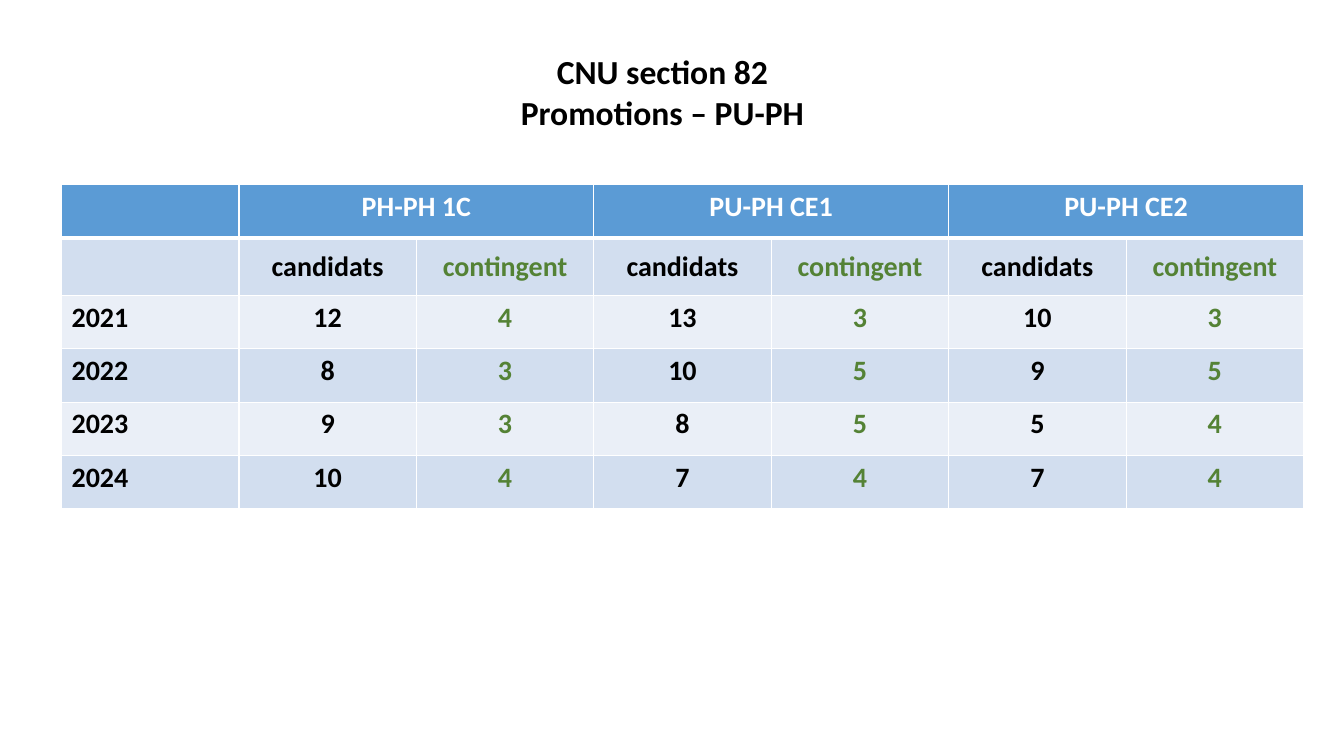
from dataclasses import dataclass

from lxml.etree import SubElement
from pptx import Presentation
from pptx.dml.color import RGBColor
from pptx.enum.text import MSO_ANCHOR, MSO_AUTO_SIZE, PP_ALIGN
from pptx.oxml.ns import qn
from pptx.slide import Slide
from pptx.table import Table, _Cell
from pptx.text.text import TextFrame
from pptx.util import Inches, Pt


@dataclass(frozen=True)
class Theme:
    font: str = "Calibri"
    title_size: int = 24
    table_size: int = 20
    text: str = "000000"
    quota: str = "548235"
    white: str = "FFFFFF"
    header: str = "5B9BD5"
    band_dark: str = "D2DEEF"
    band_light: str = "EAEFF7"
    thin: int = 1
    thick: int = 3


@dataclass(frozen=True)
class CellStyle:
    fill: str
    color: str
    align: PP_ALIGN = PP_ALIGN.CENTER
    anchor: MSO_ANCHOR = MSO_ANCHOR.TOP
    top: int = 1
    bottom: int = 1


@dataclass(frozen=True)
class YearRow:
    year: int
    counts: tuple[int, ...]  # candidats, contingent for each grade


THEME = Theme()
TITLE = ("CNU section 82", "Promotions – PU-PH")
GRADES = ("PH-PH 1C", "PU-PH CE1", "PU-PH CE2")
MEASURES = ("candidats", "contingent")
YEARS = (
    YearRow(2021, (12, 4, 13, 3, 10, 3)),
    YearRow(2022, (8, 3, 10, 5, 9, 5)),
    YearRow(2023, (9, 3, 8, 5, 5, 4)),
    YearRow(2024, (10, 4, 7, 4, 7, 4)),
)
COLUMN_COUNT = 1 + len(GRADES) * len(MEASURES)
COLUMN_WIDTH = 1.76
ROW_HEIGHTS = (0.53, 0.57) + (0.53,) * len(YEARS)


def write_line(frame: TextFrame, index: int, text: str, size: int,
               color: str, align: PP_ALIGN) -> None:
    line = frame.paragraphs[0] if index == 0 else frame.add_paragraph()
    line.alignment = align
    run = line.add_run()
    run.text = text
    font_format = {"name": THEME.font, "size": Pt(size), "bold": True}
    for attribute, value in font_format.items():
        setattr(run.font, attribute, value)
    run.font.color.rgb = RGBColor.from_string(color)


def draw_title(slide: Slide) -> None:
    title = slide.shapes.add_textbox(
        Inches(5.05), Inches(0.46), Inches(3.04), Inches(0.91)).text_frame
    frame_format = {"word_wrap": False,
                    "auto_size": MSO_AUTO_SIZE.SHAPE_TO_FIT_TEXT}
    for attribute, value in frame_format.items():
        setattr(title, attribute, value)
    for index, text in enumerate(TITLE):
        write_line(title, index, text, THEME.title_size, THEME.text,
                   PP_ALIGN.CENTER)


def add_borders(cell: _Cell, top: int, bottom: int) -> None:
    properties = cell._tc.get_or_add_tcPr()
    widths = {"L": THEME.thin, "R": THEME.thin, "T": top, "B": bottom}
    for side, width in widths.items():
        border = SubElement(properties, qn(f"a:ln{side}"), w=str(Pt(width)))
        paint = SubElement(border, qn("a:solidFill"))
        SubElement(paint, qn("a:srgbClr"), val=THEME.white)


def fill_cell(cell: _Cell, text: str, style: CellStyle) -> None:
    # Borders come before the fill in the cell properties
    add_borders(cell, style.top, style.bottom)
    cell.fill.solid()
    cell.fill.fore_color.rgb = RGBColor.from_string(style.fill)
    cell.vertical_anchor = style.anchor
    if text:
        write_line(cell.text_frame, 0, text, THEME.table_size, style.color,
                   style.align)


def measure_color(column: int) -> str:
    is_quota = column > 0 and column % len(MEASURES) == 0
    return THEME.quota if is_quota else THEME.text


def fill_table(table: Table) -> None:
    # Grade headings, each across its two measures
    heading = CellStyle(THEME.header, THEME.white, bottom=THEME.thick)
    for column in range(COLUMN_COUNT):
        grade, offset = divmod(column - 1, len(MEASURES))
        starts_grade = column > 0 and offset == 0
        fill_cell(table.cell(0, column),
                  GRADES[grade] if starts_grade else "", heading)
        if starts_grade:
            table.cell(0, column).merge(
                table.cell(0, column + len(MEASURES) - 1))

    # Measure names
    for column, text in enumerate(("",) + MEASURES * len(GRADES)):
        fill_cell(table.cell(1, column), text, CellStyle(
            THEME.band_dark, measure_color(column),
            anchor=MSO_ANCHOR.MIDDLE, top=THEME.thick))

    # One banded row per year
    for index, entry in enumerate(YEARS):
        band = THEME.band_dark if index % 2 else THEME.band_light
        for column, value in enumerate((entry.year, *entry.counts)):
            align = PP_ALIGN.CENTER if column else PP_ALIGN.LEFT
            fill_cell(table.cell(index + 2, column), str(value),
                      CellStyle(band, measure_color(column), align))


def draw_table(slide: Slide) -> None:
    table = slide.shapes.add_table(
        len(ROW_HEIGHTS), COLUMN_COUNT, Inches(0.61), Inches(1.83),
        Inches(COLUMN_WIDTH * COLUMN_COUNT), Inches(sum(ROW_HEIGHTS))).table
    for column in table.columns:
        column.width = Inches(COLUMN_WIDTH)
    for row, height in zip(table.rows, ROW_HEIGHTS):
        row.height = Inches(height)
    fill_table(table)


def main() -> None:
    presentation = Presentation()
    presentation.slide_width = Inches(13.33)
    presentation.slide_height = Inches(7.5)
    slide = presentation.slides.add_slide(presentation.slide_layouts[6])
    draw_title(slide)
    draw_table(slide)
    presentation.save("out.pptx")


if __name__ == "__main__":
    main()
